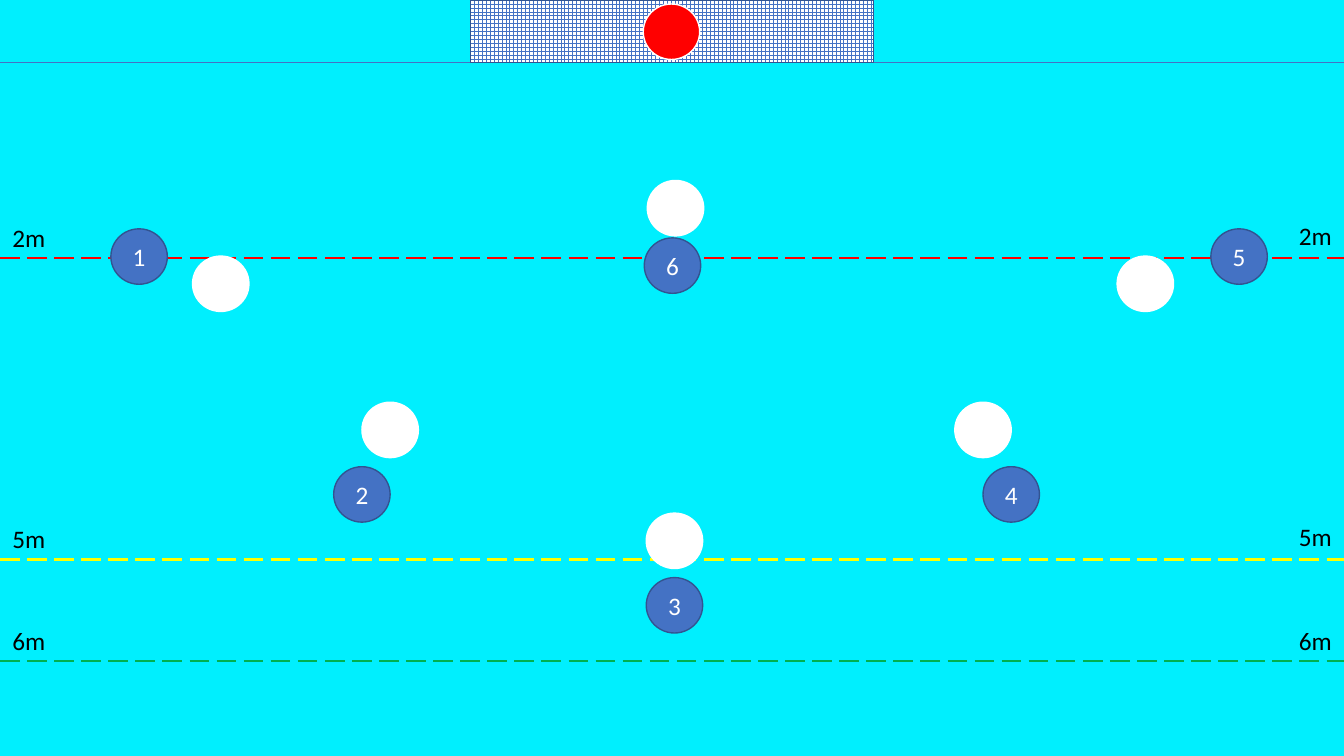
"""Water polo half-pool diagram: goal, distance lines, attackers and defenders."""
from lxml import etree
from pptx import Presentation
from pptx import util as u
from pptx.dml.color import RGBColor
from pptx.enum import dml, shapes, text
from pptx.oxml.ns import qn

WIDE, HIGH = 13.33, 7.5
FONT = "Calibri"
HUES = {"pool": "00EFFE", "blue": "4472C4", "navy": "325491", "red": "FF0000",
        "green": "00B050", "yellow": "FFFF00", "white": "FFFFFF", "black": "000000"}

GOAL = (WIDE * 0.35, WIDE * 0.3, 0.62)
MARKS = [("2m", 2.56, "red", 2.16, 2.14),
         ("6m", 6.56, "green", 6.15, 6.15),
         ("5m", 5.55, "yellow", 5.14, 5.12)]
LABEL = (0.57, 0.4)
BALL = (0.56, 0.55)
TEAMS = [("blue", "navy", [("1", 1.1, 2.27), ("2", 3.31, 4.63), ("3", 6.41, 5.73),
                           ("4", 9.75, 4.63), ("5", 12.01, 2.27), ("6", 6.39, 2.36)]),
         ("white", "white", [("", 1.91, 2.54), ("", 3.59, 3.99), ("", 6.41, 5.09),
                             ("", 9.47, 3.99), ("", 11.08, 2.54), ("", 6.42, 1.79)]),
         ("red", "white", [("", 6.38, 0.04)])]


def hue(name):
    return RGBColor.from_string(HUES[name])


def box(*sides):
    return [u.Inches(side) for side in sides]


def write(frame, words, ink):
    frame.text = words
    para = frame.paragraphs[0]
    para.alignment = text.PP_ALIGN.CENTER
    for run in para.runs:
        run.font.name, run.font.size = FONT, u.Pt(18)
        run.font.color.rgb = hue(ink)


def rule(slide, top, ink, width, dash=None):
    line = slide.shapes.add_connector(shapes.MSO_CONNECTOR.STRAIGHT, *box(0, top, WIDE, top))
    line.line.color.rgb = hue(ink)
    line.line.width = u.Pt(width)
    if dash:
        line.line.dash_style = dash
    etree.SubElement(line._element.spPr, qn("a:effectLst"))


def form(slide, kind, place, edge):
    shape = slide.shapes.add_shape(kind, *box(*place))
    shape.shadow.inherit = False
    shape.line.color.rgb = hue(edge)
    shape.line.width = u.Pt(1)
    return shape


def label(slide, words, left, top):
    frame = slide.shapes.add_textbox(*box(left, top, *LABEL)).text_frame
    frame.word_wrap = True
    frame.auto_size = text.MSO_AUTO_SIZE.SHAPE_TO_FIT_TEXT
    write(frame, words, "black")


def main():
    deck = Presentation()
    deck.slide_width, deck.slide_height = box(WIDE, HIGH)
    slide = deck.slides.add_slide(deck.slide_layouts[6])
    slide.background.fill.solid()
    slide.background.fill.fore_color.rgb = hue("pool")

    left, width, depth = GOAL
    rule(slide, depth, "blue", 0.5)
    for _, top, ink, _, _ in MARKS:
        rule(slide, top, ink, 1.75, dml.MSO_LINE.LONG_DASH)

    net = form(slide, shapes.MSO_SHAPE.RECTANGLE, (left, 0, width, depth), "navy").fill
    net.patterned()
    net.pattern = dml.MSO_PATTERN.LARGE_GRID
    net.fore_color.rgb, net.back_color.rgb = hue("blue"), hue("white")

    for words, _, _, west, east in MARKS:
        label(slide, words, 0, west)
        label(slide, words, WIDE - LABEL[0], east)

    for fill, edge, team in TEAMS:
        for number, x, y in team:
            cap = form(slide, shapes.MSO_SHAPE.OVAL, (x, y, *BALL), edge)
            cap.fill.solid()
            cap.fill.fore_color.rgb = hue(fill)
            if number:
                cap.text_frame.vertical_anchor = text.MSO_ANCHOR.MIDDLE
                write(cap.text_frame, number, "white")

    deck.save("out.pptx")


if __name__ == "__main__":
    main()
